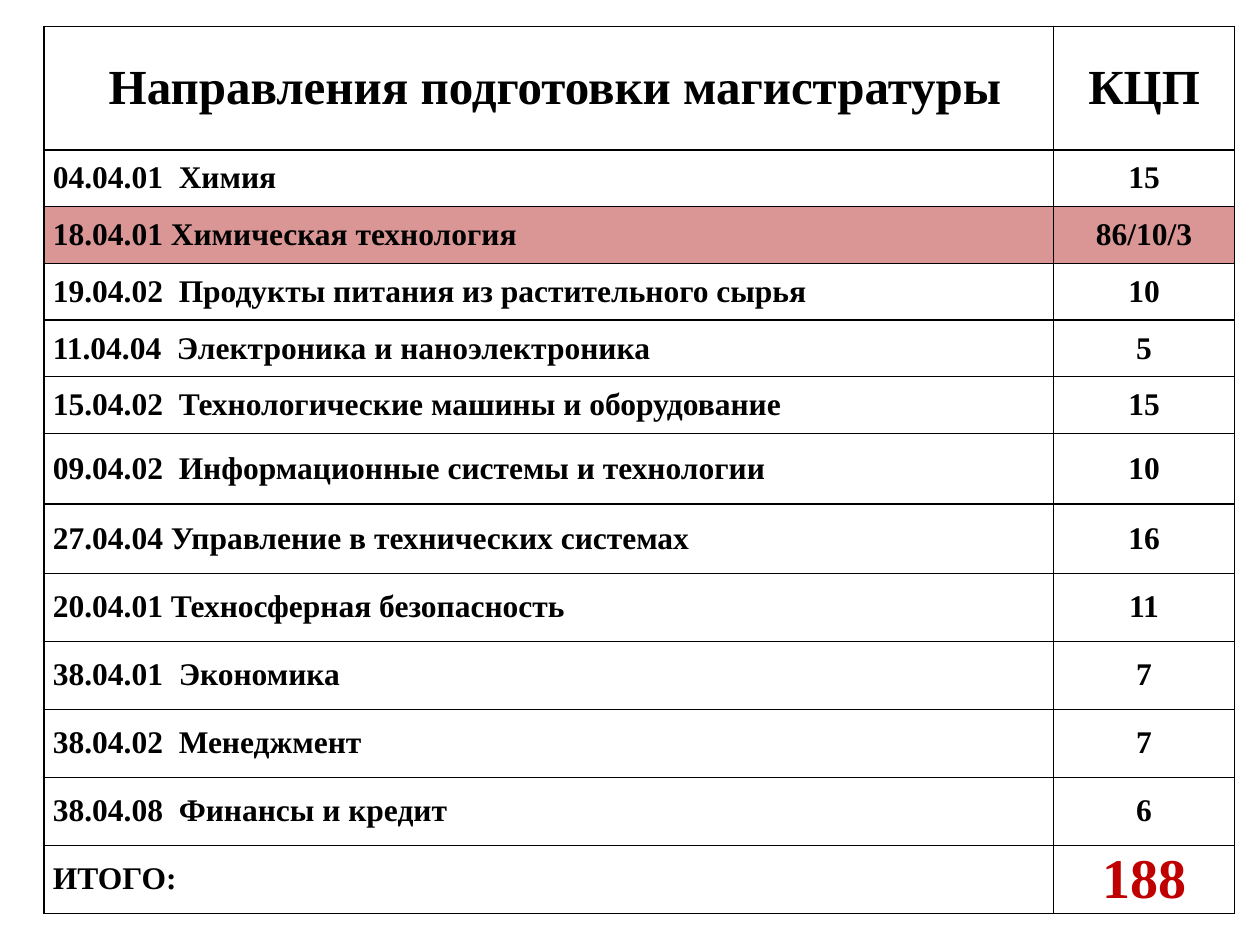
"""Builds a slide with the table of master's programmes and their admission quotas."""
from dataclasses import dataclass

from lxml import etree
from pptx import Presentation
from pptx.dml.color import RGBColor
from pptx.enum.text import MSO_ANCHOR, PP_ALIGN
from pptx.oxml.ns import qn
from pptx.util import Inches, Pt

LEFT, CENTER = PP_ALIGN.LEFT, PP_ALIGN.CENTER
MIDDLE = MSO_ANCHOR.MIDDLE


@dataclass(frozen=True)
class Theme:
    font: str = "Times New Roman"
    ink: str = "000000"
    paper: str = "FFFFFF"
    highlight: str = "D99694"
    total: str = "C00000"
    header_size: int = 28
    body_size: int = 18
    total_size: int = 32
    border_width: int = 1


THEME = Theme()
HEADER = (" Направления подготовки магистратуры", "КЦП")
PROGRAMMES = [
    ("04.04.01  Химия", "15"),
    ("18.04.01 Химическая технология", "86/10/3"),
    ("19.04.02  Продукты питания из растительного сырья", "10"),
    ("11.04.04  Электроника и наноэлектроника", "5"),
    ("15.04.02  Технологические машины и оборудование", "15"),
    ("09.04.02  Информационные системы и технологии", "10"),
    ("27.04.04 Управление в технических системах", "16"),
    ("20.04.01 Техносферная безопасность", "11"),
    ("38.04.01  Экономика", "7"),
    ("38.04.02  Менеджмент", "7"),
    ("38.04.08  Финансы и кредит", "6"),
]
TOTAL = ("ИТОГО:", "188")
HIGHLIGHTED = PROGRAMMES[1]

TABLE_LEFT, TABLE_TOP = 0.35, 0.21
COLUMN_WIDTHS = (8.01, 1.44)
ROW_HEIGHTS = [0.98] + [0.45] * 5 + [0.56, 0.55] + [0.54] * 5
SIDE_MARGIN = 0.07


def draw_borders(cell):
    properties = cell._tc.get_or_add_tcPr()
    for side in ("lnL", "lnR", "lnT", "lnB"):
        border = etree.SubElement(
            properties, qn(f"a:{side}"), w=str(Pt(THEME.border_width))
        )
        paint = etree.SubElement(border, qn("a:solidFill"))
        etree.SubElement(paint, qn("a:srgbClr"), val=THEME.ink)


def fill_cell(cell, text, size, color, background, alignment):
    draw_borders(cell)
    cell.fill.solid()
    cell.fill.fore_color.rgb = RGBColor.from_string(background)
    cell.vertical_anchor = MIDDLE
    cell.margin_left = cell.margin_right = Inches(SIDE_MARGIN)
    cell.margin_top = cell.margin_bottom = 0
    paragraph = cell.text_frame.paragraphs[0]
    paragraph.alignment = alignment
    run = paragraph.add_run()
    run.text = text
    run.font.name = THEME.font
    run.font.size = Pt(size)
    run.font.bold = True
    run.font.color.rgb = RGBColor.from_string(color)


def add_quota_table(slide):
    rows = [HEADER, *PROGRAMMES, TOTAL]
    table = slide.shapes.add_table(
        len(rows), len(COLUMN_WIDTHS), Inches(TABLE_LEFT), Inches(TABLE_TOP),
        Inches(sum(COLUMN_WIDTHS)), Inches(sum(ROW_HEIGHTS)),
    ).table
    table.horz_banding = False
    for column, width in zip(table.columns, COLUMN_WIDTHS):
        column.width = Inches(width)
    for row, height, record in zip(table.rows, ROW_HEIGHTS, rows):
        row.height = Inches(height)
        background = THEME.highlight if record == HIGHLIGHTED else THEME.paper
        for cell, text in zip(row.cells, record):
            size, color, alignment = THEME.body_size, THEME.ink, CENTER
            if record == HEADER:
                size = THEME.header_size
            elif text == record[0]:
                alignment = LEFT
            elif record == TOTAL:
                size, color = THEME.total_size, THEME.total
            fill_cell(cell, text, size, color, background, alignment)


def main():
    presentation = Presentation()
    presentation.slide_width, presentation.slide_height = Inches(10), Inches(7.5)
    slide = presentation.slides.add_slide(presentation.slide_layouts[6])
    add_quota_table(slide)
    presentation.save("out.pptx")


if __name__ == "__main__":
    main()
